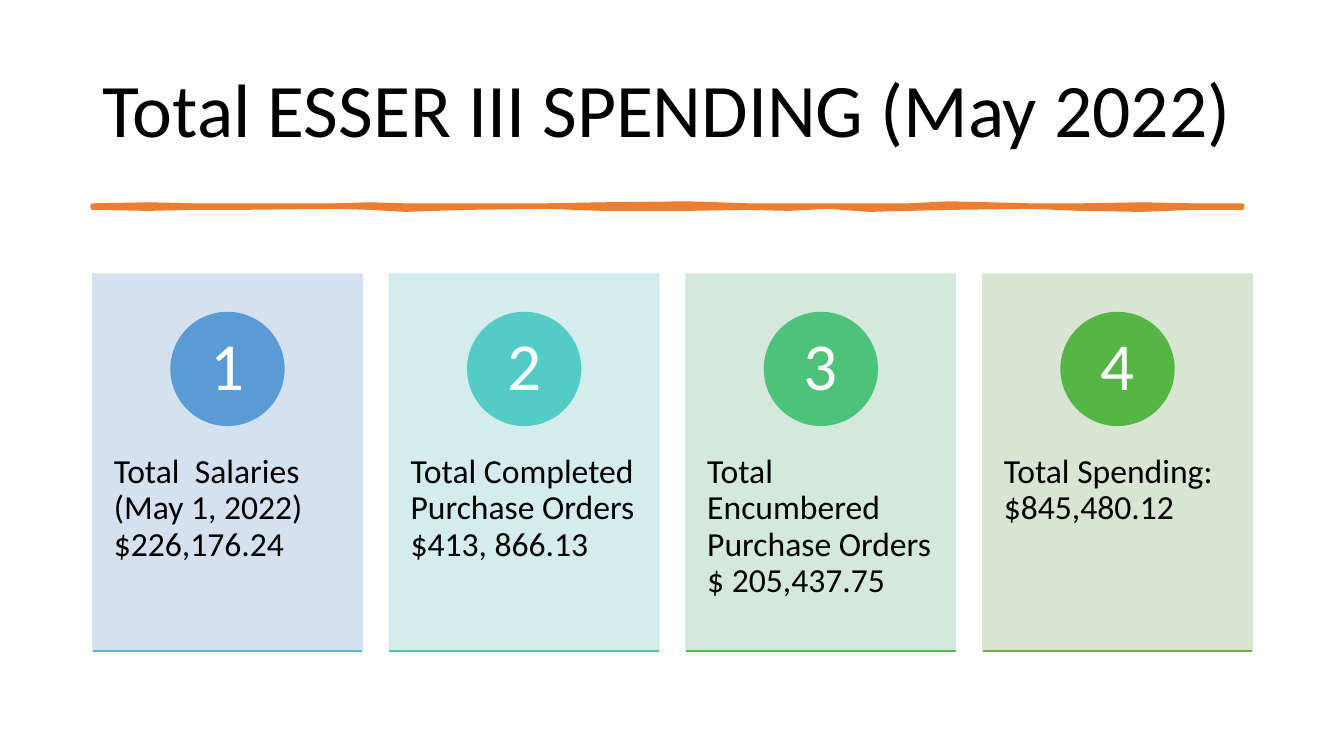
from lxml.etree import SubElement
from pptx import Presentation
from pptx.dml.color import RGBColor
from pptx.enum.shapes import MSO_CONNECTOR, MSO_SHAPE
from pptx.enum.text import MSO_ANCHOR, PP_ALIGN
from pptx.oxml.ns import qn
from pptx.util import Inches, Pt

COLORS = {"text": "000000", "number": "FFFFFF", "brush": "ED7D31"}

# label, card colour, circle colour, base line colour
SPENDING = [
    ("Total  Salaries (May 1, 2022) $226,176.24", "D2DEEF", "5B9BD5", "57B7D1"),
    ("Total Completed Purchase Orders $413, 866.13", "D0ECEA", "53CCC5", "4FC7A0"),
    ("Total Encumbered Purchase Orders $ 205,437.75", "D0E7D8", "4CC27B", "48BD58"),
    ("Total Spending: $845,480.12", "D5E3CF", "55B646", "70AD47"),
]

# distance along the brush stroke, upper edge, lower edge
BRUSH_EDGES = [
    (0, 0, 0.02), (0.55, -0.01, 0.03), (1, 0, 0.02), (1.45, 0, 0.02),
    (2.4, 0, 0.01), (2.75, -0.01, 0.02), (3.1, 0, 0.04), (3.7, 0, 0.02),
    (4.5, 0, 0.01), (5.05, -0.01, 0.03), (5.9, -0.02, 0.03), (6.5, 0, 0.02),
    (6.9, 0, 0.03), (7.3, 0, 0.01), (7.7, 0, 0.04), (8.1, 0, 0.03),
    (8.5, -0.02, 0.02), (9.3, 0, 0.01), (9.8, 0, 0.03), (10.4, -0.01, 0.04),
    (10.9, 0, 0.02), (11.4, 0, 0.02),
]


def rgb(color):
    return RGBColor.from_string(color)


def write(shape, text, size, color=COLORS["text"], align=PP_ALIGN.LEFT,
          anchor=MSO_ANCHOR.TOP, insets=(0.1, 0.05)):
    """Set one paragraph; insets are horizontal and vertical, in inches."""
    frame = shape.text_frame
    frame.word_wrap = True
    frame.vertical_anchor = anchor
    frame.margin_left = frame.margin_right = Inches(insets[0])
    frame.margin_top = frame.margin_bottom = Inches(insets[1])
    paragraph = frame.paragraphs[0]
    paragraph.alignment = align
    paragraph.line_spacing = 0.9
    run = paragraph.add_run()
    run.text = text
    run.font.name = "Calibri"
    run.font.size = Pt(size)
    run.font.color.rgb = rgb(color)


def paint(shape, color, line_width=1, opacity=100):
    shape.shadow.inherit = False
    shape.fill.solid()
    shape.fill.fore_color.rgb = rgb(color)
    shape.line.color.rgb = rgb(color)
    shape.line.width = Pt(line_width)
    if opacity < 100:
        for tint in shape._element.spPr.iter(qn("a:srgbClr")):
            SubElement(tint, qn("a:alpha"), val=str(opacity * 1000))


def add_title(slide, left, top, width, height):
    title = slide.shapes.add_textbox(
        Inches(left), Inches(top), Inches(width), Inches(height))
    write(title, "Total ESSER III SPENDING (May 2022)", 54,
          anchor=MSO_ANCHOR.MIDDLE)


def add_brush_stroke(slide, left, top):
    upper = [(x, high) for x, high, low in BRUSH_EDGES]
    lower = [(x, low) for x, high, low in reversed(BRUSH_EDGES)]
    outline = [(Inches(left + x), Inches(top + y)) for x, y in upper + lower]
    builder = slide.shapes.build_freeform(*outline[0])
    builder.add_line_segments(outline[1:], close=True)
    paint(builder.convert_to_shape(), COLORS["brush"], line_width=3.25)


def add_card(slide, left, top, width, height, number, entry):
    label_text, card_color, circle_color, base_color = entry
    shapes = slide.shapes
    card = shapes.add_shape(MSO_SHAPE.RECTANGLE, Inches(left), Inches(top),
                            Inches(width), Inches(height))
    paint(card, card_color, opacity=90)

    label = shapes.add_textbox(Inches(left), Inches(top + 1.43),
                               Inches(width), Inches(2.25))
    write(label, label_text, 24, insets=(0.21, 0.36))

    diameter = 1.12
    circle = shapes.add_shape(
        MSO_SHAPE.OVAL, Inches(left + (width - diameter) / 2),
        Inches(top + 0.38), Inches(diameter), Inches(diameter))
    paint(circle, circle_color)
    write(circle, str(number), 48, color=COLORS["number"],
          align=PP_ALIGN.CENTER, anchor=MSO_ANCHOR.MIDDLE, insets=(0.09, 0.01))

    base_y = Inches(top + height)
    base = shapes.add_connector(MSO_CONNECTOR.STRAIGHT, Inches(left), base_y,
                                Inches(left + width), base_y)
    base.line.color.rgb = rgb(base_color)
    base.line.width = Pt(1)
    SubElement(base._element.spPr, qn("a:effectLst"))


def add_cards(slide, left, top, width, height, gap=0.27):
    card_width = (width - gap * (len(SPENDING) - 1)) / len(SPENDING)
    for index, entry in enumerate(SPENDING):
        add_card(slide, left + index * (card_width + gap), top,
                 card_width, height, index + 1, entry)


def main():
    deck = Presentation()
    deck.slide_width, deck.slide_height = Inches(13.33), Inches(7.5)
    slide = deck.slides.add_slide(deck.slide_layouts[6])
    add_title(slide, 0.92, 0.4, 11.5, 1.45)
    add_brush_stroke(slide, 0.92, 2.04)
    add_cards(slide, 0.92, 2.72, 11.5, 3.74)
    deck.save("out.pptx")


if __name__ == "__main__":
    main()
